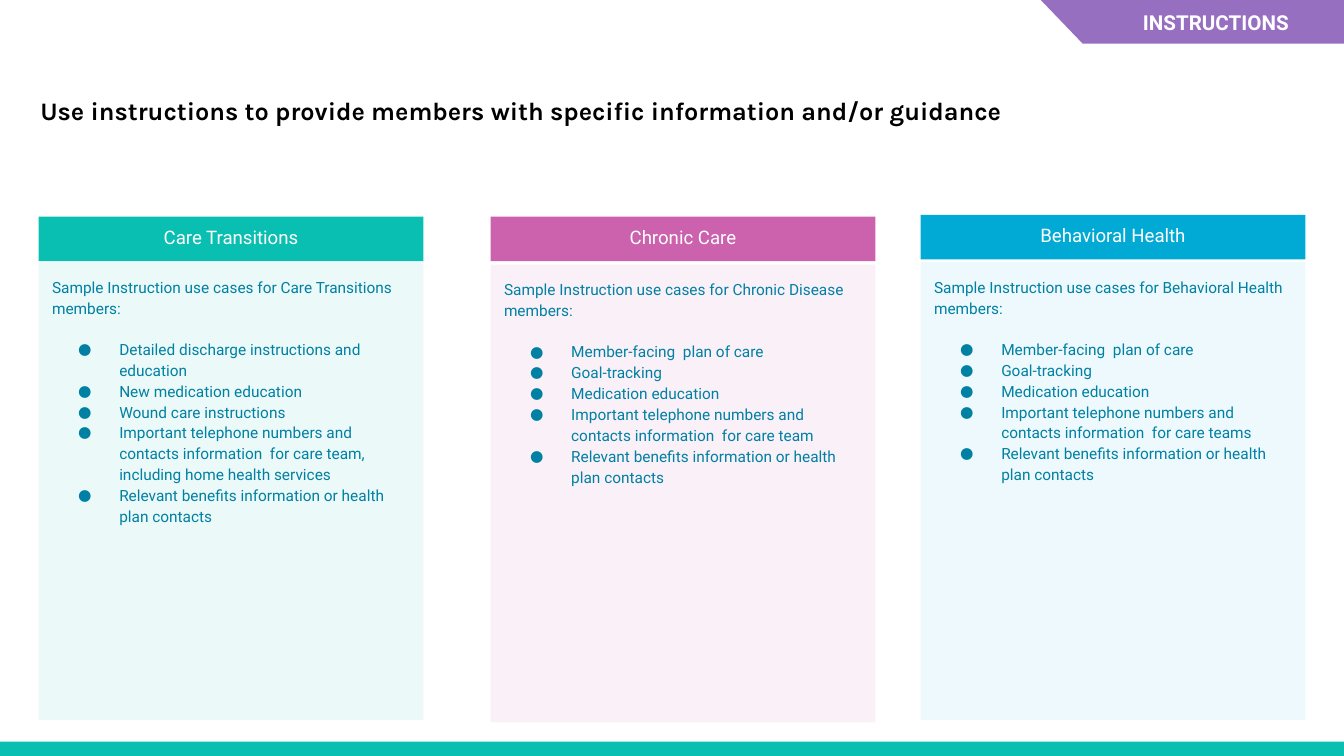
from dataclasses import dataclass

from lxml import etree
from pptx import Presentation
from pptx.dml.color import RGBColor
from pptx.enum.shapes import MSO_SHAPE
from pptx.enum.text import MSO_ANCHOR, PP_ALIGN
from pptx.oxml.ns import qn
from pptx.util import Inches, Pt

RECTANGLE = MSO_SHAPE.RECTANGLE
LEFT, CENTER = PP_ALIGN.LEFT, PP_ALIGN.CENTER
TOP, MIDDLE, BOTTOM = MSO_ANCHOR.TOP, MSO_ANCHOR.MIDDLE, MSO_ANCHOR.BOTTOM

# The page is a grid of square cells, one inch each.
COLUMNS, ROWS = 16, 9
CELL = Inches(1)
CARD_WIDTH, HEADER_HEIGHT, BODY_HEIGHT = 4.58, 0.53, 5.45
INSET = 0.16
BULLET_INDENT, BULLET_HANG = 0.8, 0.49


@dataclass(frozen=True)
class Theme:
    teal: str = "09BFB1"
    pink: str = "CC61AD"
    blue: str = "00AAD5"
    purple: str = "976FC1"
    body: str = "0080A3"
    black: str = "000000"
    white: str = "FFFFFF"
    title_font: str = "Karla"
    text_font: str = "Roboto"
    title_size: float = 21.6
    tag_size: float = 17.6
    header_size: float = 16
    body_size: float = 13.2
    body_spacing: float = 1.13
    list_gap: float = 17.5


THEME = Theme()


@dataclass(frozen=True)
class Card:
    heading: str
    audience: str
    color: str
    tint: int
    left: float
    header_top: float
    body_top: float
    uses: tuple


MEMBER_USES = ("Member-facing  plan of care", "Goal-tracking", "Medication education")
CONTACTS = "Important telephone numbers and contacts information  for care team"
BENEFITS = "Relevant benefits information or health plan contacts"

CARDS = (
    Card("Care Transitions", "Care Transitions", THEME.teal, 8, 0.46, 2.58, 3.12,
         ("Detailed discharge instructions and education",
          "New medication education",
          "Wound care instructions",
          CONTACTS + ", including home health services",
          BENEFITS)),
    Card("Chronic Care", "Chronic Disease", THEME.pink, 9, 5.84, 2.58, 3.15,
         MEMBER_USES + (CONTACTS, BENEFITS)),
    Card("Behavioral Health", "Behavioral Health", THEME.blue, 7, 10.96, 2.56, 3.12,
         MEMBER_USES + (CONTACTS + "s", BENEFITS)),
)


def cells(*counts):
    return [int(count * CELL) for count in counts]


def paint(shape, color, opacity=100):
    shape.shadow.inherit = False
    shape.line.fill.background()
    shape.fill.solid()
    shape.fill.fore_color.rgb = RGBColor.from_string(color)
    if opacity < 100:
        color_node = shape.fill._xPr.find(qn("a:solidFill"))[0]
        etree.SubElement(color_node, qn("a:alpha"), val=str(opacity * 1000))


def add_panel(page, area, color, opacity=100):
    panel = page.shapes.add_shape(RECTANGLE, *cells(*area))
    paint(panel, color, opacity)
    return panel


def write(shape, text, size, color, font=THEME.text_font, bold=False,
          align=LEFT, anchor=TOP, inset_y=INSET):
    """Fill a shape with one paragraph per line of text."""
    frame = shape.text_frame
    frame.word_wrap = True
    frame.vertical_anchor = anchor
    frame.margin_left, frame.margin_right = cells(INSET, INSET)
    frame.margin_top, frame.margin_bottom = cells(inset_y, inset_y)
    frame.text = text
    for para in frame.paragraphs:
        para.alignment = align
        for span in para.runs:
            span.font.name = font
            span.font.size = Pt(size)
            span.font.bold = bold
            span.font.color.rgb = RGBColor.from_string(color)
    return frame.paragraphs


def add_bullet(para):
    properties = para._p.get_or_add_pPr()
    indent, hang = cells(BULLET_INDENT, BULLET_HANG)
    properties.set("marL", str(indent))
    properties.set("indent", str(-hang))
    bullet_color = etree.SubElement(properties, qn("a:buClr"))
    etree.SubElement(bullet_color, qn("a:srgbClr"), val=THEME.body)
    etree.SubElement(properties, qn("a:buFont"), typeface=THEME.text_font)
    etree.SubElement(properties, qn("a:buChar"), char="●")


def add_card(page, card):
    header = add_panel(page, (card.left, card.header_top, CARD_WIDTH, HEADER_HEIGHT),
                       card.color)
    write(header, card.heading, THEME.header_size, THEME.white,
          align=CENTER, anchor=BOTTOM)

    body = add_panel(page, (card.left, card.body_top, CARD_WIDTH, BODY_HEIGHT),
                     card.color, card.tint)
    intro = f"Sample Instruction use cases for {card.audience} members:"
    paras = write(body, "\n".join((intro, *card.uses)), THEME.body_size, THEME.body)
    for para in paras[1:]:
        add_bullet(para)
    for para in paras:
        para.line_spacing = THEME.body_spacing
    paras[1].space_before = Pt(THEME.list_gap)


def add_title(page, text):
    box = page.shapes.add_textbox(*cells(0.32, 1.05, COLUMNS - 0.32, 1))
    write(box, text, THEME.title_size, THEME.black, THEME.title_font,
          bold=True, inset_y=INSET / 2)


def add_corner_tag(page, text):
    left, slant, height = 12.39, 0.5, 0.52
    builder = page.shapes.build_freeform(*cells(left, 0))
    corners = ((left + slant, height), (COLUMNS, height), (COLUMNS, 0))
    builder.add_line_segments([cells(*corner) for corner in corners], close=True)
    paint(builder.convert_to_shape(), THEME.purple)

    box = page.shapes.add_textbox(*cells(12.95, 0.02, COLUMNS - 12.95, 0.48))
    write(box, text, THEME.tag_size, THEME.white, bold=True,
          align=CENTER, anchor=MIDDLE)


def main():
    deck = Presentation()
    deck.slide_width, deck.slide_height = cells(COLUMNS, ROWS)
    page = deck.slides.add_slide(deck.slide_layouts[6])
    add_panel(page, (0, ROWS - 0.17, COLUMNS, 0.17), THEME.teal)
    add_title(page, "Use instructions to provide members with specific "
                    "information and/or guidance")
    for card in CARDS:
        add_card(page, card)
    add_corner_tag(page, "INSTRUCTIONS")
    deck.save("out.pptx")


if __name__ == "__main__":
    main()
